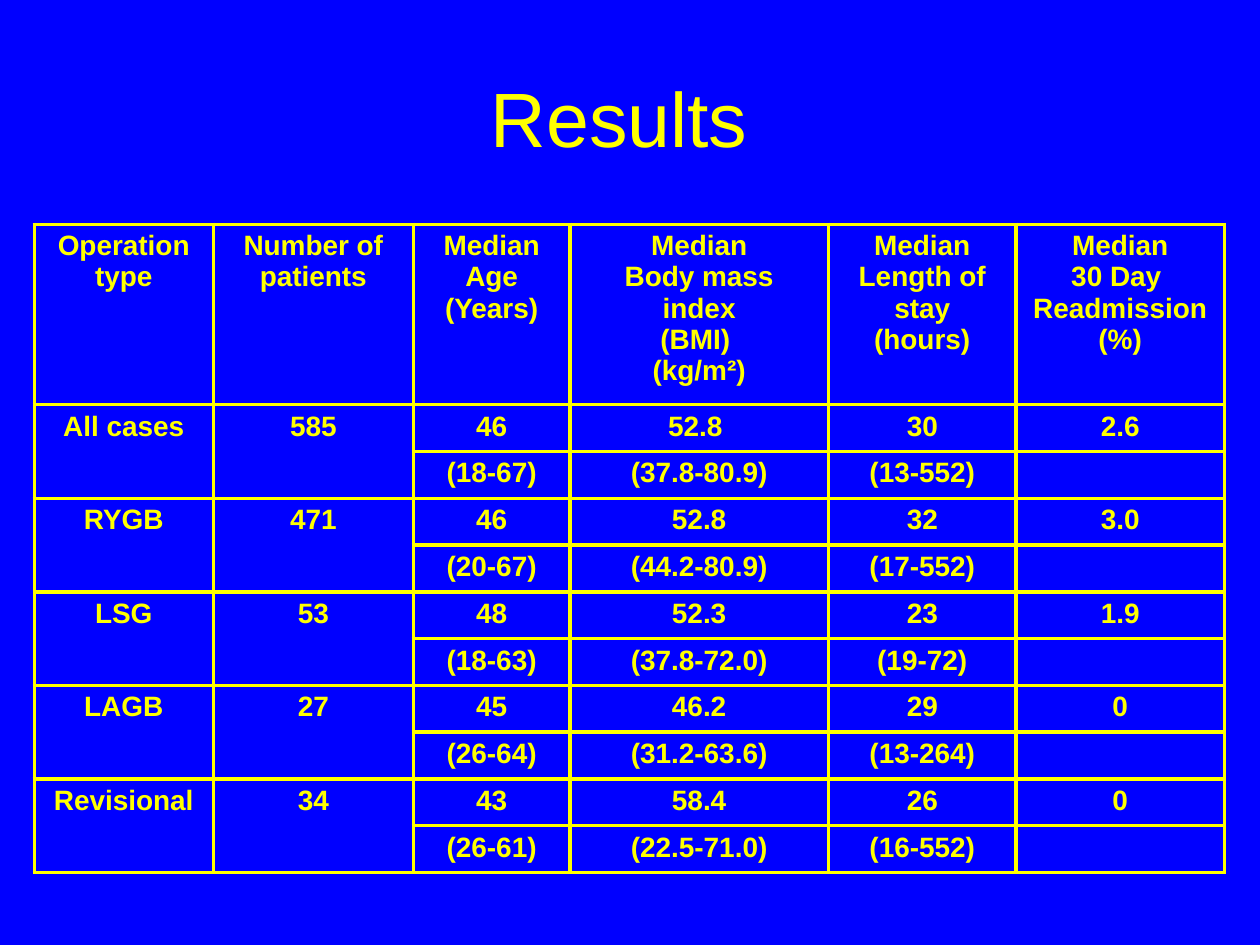
from lxml import etree
from pptx import Presentation
from pptx.dml.color import RGBColor
from pptx.enum.text import MSO_ANCHOR, PP_ALIGN
from pptx.oxml.ns import qn
from pptx.util import Pt

CENTER = PP_ALIGN.CENTER
MIDDLE = MSO_ANCHOR.MIDDLE

COLORS = {"background": "0000FF", "ink": "FFFF00"}
FONT = "Arial"
NO_STYLE = "{2D5ABB26-0587-4C30-8999-92F81FD0307C}"
TITLE = "Results "
HEADERS = [
    ["Operation", "type"],
    ["Number of", "patients"],
    ["Median", "Age", "(Years)"],
    ["Median", "Body mass", "index", "(BMI) ", "(kg/m²)"],
    ["Median", "Length of", "stay", "(hours)"],
    ["Median", "30 Day ", "Readmission", "(%)"],
]
OPERATIONS = [
    (["All cases", "585", "46", "52.8 ", "30", "2.6"], ["(18-67)", "(37.8-80.9)", "(13-552)"]),
    (["RYGB", "471", "46", "52.8", "32", "3.0"], ["(20-67)", "(44.2-80.9)", "(17-552)"]),
    (["LSG", "53", "48", "52.3", "23", "1.9"], ["(18-63)", "(37.8-72.0)", "(19-72)"]),
    (["LAGB", "27", "45", "46.2", "29", "0"], ["(26-64)", "(31.2-63.6)", "(13-264)"]),
    (["Revisional", "34", "43", "58.4", "26", "0"], ["(26-61)", "(22.5-71.0)", "(16-552)"]),
]
LEFT, TOP = 19.6, 128.2
COL_WIDTHS = [102.3, 114.4, 89.4, 147.8, 107.2, 119]
HEADER_HEIGHT, ROW_HEIGHT = 103.1, 26.68
MERGED_COLS = 2
INDENT = 27
BORDER = 2.25


def add_run(p, text, size, bold=False):
    """Add one formatted run to a paragraph."""
    r = p.add_run()
    r.text = text
    r.font.name = FONT
    r.font.size = Pt(size)
    r.font.bold = bold
    r.font.color.rgb = RGBColor.from_string(COLORS["ink"])


def set_borders(cell, sides):
    """Draw the named sides of a cell, given as letters from LRTB."""
    tcPr = cell._tc.get_or_add_tcPr()
    for side in "LRTB":
        if side in sides:
            ln = etree.SubElement(tcPr, qn(f"a:ln{side}"), w=str(Pt(BORDER)))
            fill = etree.SubElement(ln, qn("a:solidFill"))
            etree.SubElement(fill, qn("a:srgbClr"), val=COLORS["ink"])
    cell.fill.background()


def fill_cell(cell, lines):
    """Write centred bold lines, one paragraph each."""
    tf = cell.text_frame
    for i, line in enumerate(lines):
        p = tf.add_paragraph() if i else tf.paragraphs[0]
        p.alignment = CENTER
        pPr = p._p.get_or_add_pPr()
        pPr.set("marL", str(Pt(INDENT)))
        pPr.set("indent", str(-Pt(INDENT)))
        if line:
            add_run(p, line, 16, True)
        else:
            etree.SubElement(p._p, qn("a:endParaRPr"), sz="1600")


def add_results_table(slide):
    """Build the table with two grid rows for each operation."""
    n_rows = 1 + 2 * len(OPERATIONS)
    height = HEADER_HEIGHT + ROW_HEIGHT * (n_rows - 1)
    table = slide.shapes.add_table(
        n_rows, len(COL_WIDTHS), Pt(LEFT), Pt(TOP), Pt(sum(COL_WIDTHS)), Pt(height)
    ).table
    table.first_row = table.horz_banding = False
    table._tbl.tblPr.find(qn("a:tableStyleId")).text = NO_STYLE
    for col, width in zip(table.columns, COL_WIDTHS):
        col.width = Pt(width)
    for i, row in enumerate(table.rows):
        row.height = Pt(ROW_HEIGHT if i else HEADER_HEIGHT)

    for c, lines in enumerate(HEADERS):
        fill_cell(table.cell(0, c), lines)
        set_borders(table.cell(0, c), "LRTB")
    for i, (values, ranges) in enumerate(OPERATIONS):
        top = 1 + 2 * i
        lower = [""] * MERGED_COLS + ranges + [""]
        for c, (value, span) in enumerate(zip(values, lower)):
            upper_cell, lower_cell = table.cell(top, c), table.cell(top + 1, c)
            merged = c < MERGED_COLS
            if merged:
                upper_cell.merge(lower_cell)
            fill_cell(upper_cell, [value])
            fill_cell(lower_cell, [span])
            set_borders(upper_cell, "LRTB" if merged else "LRT")
            set_borders(lower_cell, "LRB")


def main():
    """Build the results slide."""
    prs = Presentation()
    prs.slide_width, prs.slide_height = Pt(720), Pt(540)
    s = prs.slides.add_slide(prs.slide_layouts[5])
    s.background.fill.solid()
    s.background.fill.fore_color.rgb = RGBColor.from_string(COLORS["background"])

    title = s.shapes.title
    title.left, title.top, title.width, title.height = Pt(36), Pt(21.6), Pt(648), Pt(90)
    tf = title.text_frame
    tf.vertical_anchor = MIDDLE
    p = tf.paragraphs[0]
    p.alignment = CENTER
    add_run(p, TITLE, 44)

    add_results_table(s)
    prs.save("out.pptx")


if __name__ == "__main__":
    main()
